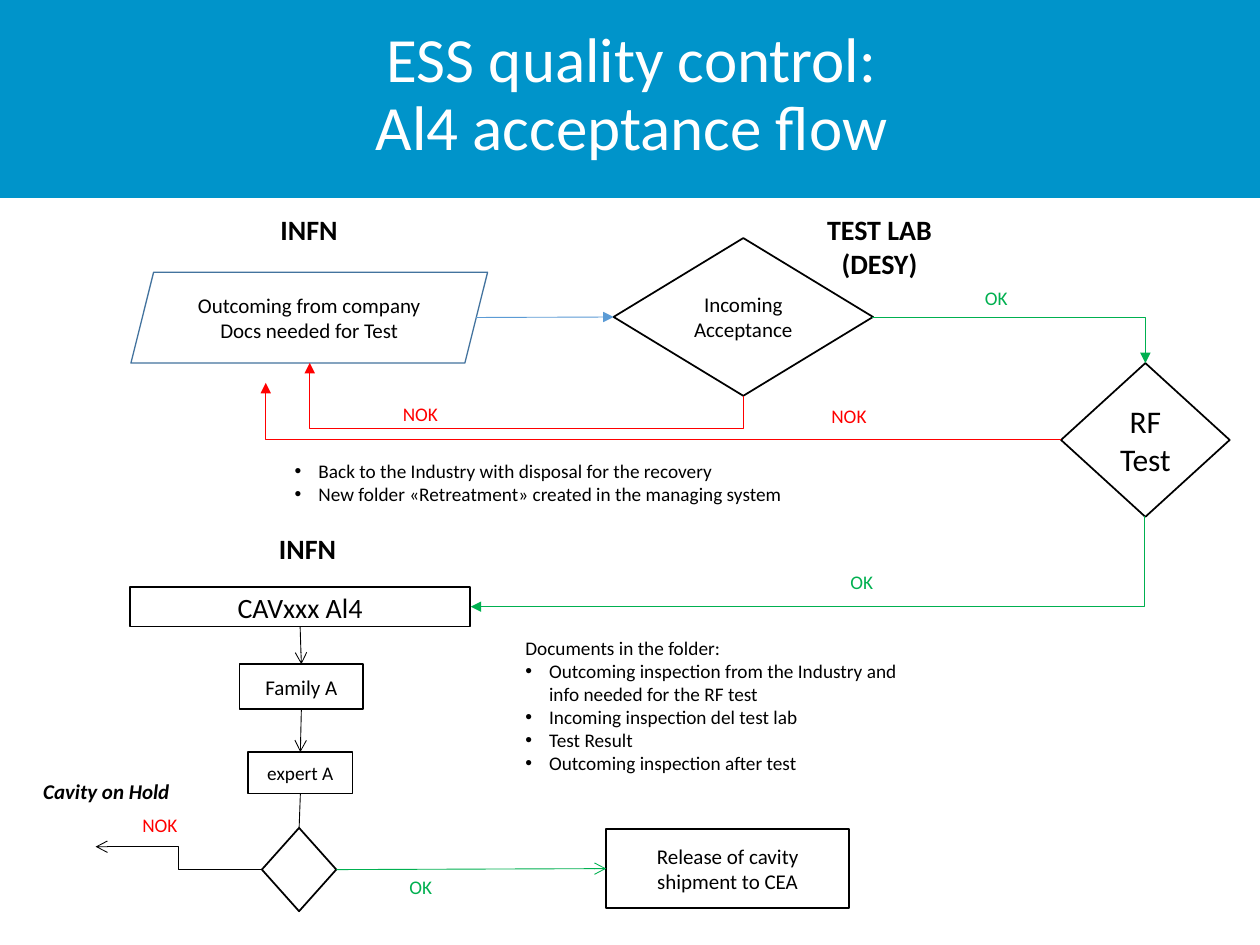
from lxml import etree
from pptx import Presentation
from pptx.dml.color import RGBColor
from pptx.enum.shapes import MSO_CONNECTOR, MSO_SHAPE
from pptx.enum.text import MSO_ANCHOR, PP_ALIGN
from pptx.oxml.ns import qn
from pptx.util import Cm, Pt

WHITE = RGBColor(0xFF, 0xFF, 0xFF)
BLACK = RGBColor(0, 0, 0)
BANNER_BLUE = RGBColor(0x00, 0x94, 0xCA)
LINK_BLUE = RGBColor(0x5B, 0x9B, 0xD5)
EDGE_BLUE = RGBColor(0x43, 0x73, 0x9E)
RED = RGBColor(0xFF, 0, 0)
GREEN = RGBColor(0x00, 0xB0, 0x50)
RECTANGLE, DECISION = MSO_SHAPE.RECTANGLE, MSO_SHAPE.FLOWCHART_DECISION
PARALLELOGRAM = MSO_SHAPE.PARALLELOGRAM
STRAIGHT, ELBOW = MSO_CONNECTOR.STRAIGHT, MSO_CONNECTOR.ELBOW
LEFT, CENTER, MIDDLE = PP_ALIGN.LEFT, PP_ALIGN.CENTER, MSO_ANCHOR.MIDDLE
TOP_SIDE, LEFT_SIDE, BOTTOM_SIDE, RIGHT_SIDE = range(4)


def write(shape, lines, size, color=BLACK, align=CENTER, bold=False, italic=False):
    frame = shape.text_frame
    frame.word_wrap = True
    for index, line in enumerate(lines):
        para = frame.paragraphs[0] if index == 0 else frame.add_paragraph()
        para.text = line.removeprefix("• ")
        para.alignment = align
        if line.startswith("• "):
            properties = para._p.get_or_add_pPr()
            properties.set("marL", str(Cm(0.48)))
            properties.set("indent", str(Cm(-0.48)))
            etree.SubElement(properties, qn("a:buFont")).set("typeface", "Arial")
            etree.SubElement(properties, qn("a:buChar")).set("char", "•")
        para.font.name = "Calibri"
        para.font.size = Pt(size)
        para.font.color.rgb = color
        para.font.bold = bold
        para.font.italic = italic


def connect(kind, begin, end, color, head):
    link = slide.shapes.add_connector(kind, *(Cm(value) for value in begin + end))
    link.line.color.rgb = color
    link.line.width = Pt(0.5)
    if head:
        outline = link.line._get_or_add_ln()
        etree.SubElement(outline, qn("a:tailEnd")).set("type", head)
    etree.SubElement(link._element.spPr, qn("a:effectLst"))
    return link


deck = Presentation()
deck.slide_width, deck.slide_height = Cm(25.4), Cm(19.05)
slide = deck.slides.add_slide(deck.slide_layouts[6])

for top, height, color in ((0, 3.99, BANNER_BLUE), (4.19, 14.86, WHITE)):
    panel = slide.shapes.add_shape(RECTANGLE, 0, Cm(top), deck.slide_width, Cm(height))
    panel.shadow.inherit = False
    panel.fill.solid()
    panel.fill.fore_color.rgb = color
    panel.line.fill.background()

title = slide.shapes.add_textbox(Cm(4.67), Cm(0.15), Cm(16.13), Cm(3.58))
write(title, ["ESS quality control:\vAl4 acceptance flow"], 36, WHITE)
title.text_frame.vertical_anchor = MIDDLE
title.text_frame.paragraphs[0].line_spacing = 0.9

steps = {}
for name, kind, left, top, width, height, lines, size in (
    ("company", PARALLELOGRAM, 2.64, 5.49, 7.19, 1.83,
     ["Outcoming from company", "Docs needed for Test"], 12),
    ("incoming", DECISION, 12.37, 4.8, 5.23, 3.18, ["Incoming Acceptance"], 12),
    ("rf test", DECISION, 21.39, 7.32, 3.4, 3.1, ["RF Test"], 18),
    ("cavity", RECTANGLE, 2.62, 11.84, 6.86, 0.79, ["CAVxxx Al4"], 16),
    ("family", RECTANGLE, 4.83, 13.39, 2.49, 0.91, ["Family A"], 12),
    ("expert", RECTANGLE, 5, 15.16, 2.11, 0.84, ["expert A"], 11),
    ("verdict", DECISION, 5.28, 16.69, 1.5, 1.68, [], 12),
    ("release", RECTANGLE, 12.22, 16.71, 4.9, 1.6,
     ["Release of cavity shipment to CEA"], 12),
):
    step = slide.shapes.add_shape(kind, Cm(left), Cm(top), Cm(width), Cm(height))
    step.shadow.inherit = False
    step.fill.background()
    step.line.color.rgb = BLACK
    step.line.width = Pt(1)
    step.text_frame.vertical_anchor = MIDDLE
    write(step, lines, size)
    steps[name] = step

company = steps["company"]
company.fill.solid()
company.fill.fore_color.rgb = WHITE
company.line.color.rgb = EDGE_BLUE
company.line.width = Pt(0.75)

to_incoming = connect(STRAIGHT, (9.6, 6.4), (12.37, 6.4), LINK_BLUE, "triangle")
to_incoming.end_connect(steps["incoming"], LEFT_SIDE)
for source, begin_side, target, end_side, color, head in (
    ("cavity", BOTTOM_SIDE, "family", TOP_SIDE, BLACK, "arrow"),
    ("family", BOTTOM_SIDE, "expert", TOP_SIDE, BLACK, "arrow"),
    ("expert", BOTTOM_SIDE, "verdict", TOP_SIDE, BLACK, None),
    ("verdict", RIGHT_SIDE, "release", LEFT_SIDE, GREEN, "arrow"),
):
    link = connect(STRAIGHT, (0, 0), (1, 1), color, head)
    link.begin_connect(steps[source], begin_side)
    link.end_connect(steps[target], end_side)

for begin, end, color, head, preset, turn, bend in (
    ((17.58, 6.4), (23.09, 7.32), GREEN, "triangle", "bentConnector2", 0, None),
    ((21.39, 8.86), (5.36, 7.72), RED, "triangle", "bentConnector2", 0, None),
    ((15.37, 4.52), (17.2, 18.11), GREEN, "triangle", "bentConnector2", 90, None),
    ((10.95, 3.28), (10.28, 12.02), RED, "triangle", "bentConnector3", 90, -98600),
    ((5.28, 17.53), (1.93, 17.07), BLACK, "arrow", "bentConnector3", 0, 50000),
):
    properties = connect(ELBOW, begin, end, color, head)._element.spPr
    geometry = properties.find(qn("a:prstGeom"))
    geometry.set("prst", preset)
    if turn:
        properties.find(qn("a:xfrm")).set("rot", str(turn * 60000))
    if bend is not None:
        guide = etree.SubElement(geometry.find(qn("a:avLst")), qn("a:gd"))
        guide.set("name", "adj1")
        guide.set("fmla", f"val {bend}")

for left, top, width, height, label in (
    (3.78, 4.17, 4.9, 0.99, "INFN"),
    (15.85, 4.17, 3.76, 1.63, "TEST LAB (DESY)"),
    (4.32, 10.59, 3.76, 0.99, "INFN"),
):
    box = slide.shapes.add_textbox(Cm(left), Cm(top), Cm(width), Cm(height))
    write(box, [label], 16, bold=True)

for left, top, label, color, align in (
    (7.87, 7.98, "NOK", RED, LEFT),
    (16.33, 8.03, "NOK", RED, CENTER),
    (2.44, 16.28, "NOK", RED, CENTER),
    (19.3, 5.64, "OK", GREEN, CENTER),
    (16.59, 11.38, "OK", GREEN, CENTER),
    (7.7, 17.53, "OK", GREEN, CENTER),
):
    box = slide.shapes.add_textbox(Cm(left), Cm(top), Cm(1.57), Cm(0.76))
    write(box, [label], 11, color, align)

hold = slide.shapes.add_textbox(Cm(0.28), Cm(15.57), Cm(3.73), Cm(0.81))
write(hold, ["Cavity on Hold"], 12, bold=True, italic=True)

recovery = slide.shapes.add_textbox(Cm(5.69), Cm(9.14), Cm(11), Cm(1.27))
write(recovery, [
    "• Back to the Industry with disposal for the recovery",
    "• New folder «Retreatment» created in the managing system",
], 11, align=LEFT)
recovery.text_frame.word_wrap = False

documents = slide.shapes.add_textbox(Cm(10.34), Cm(12.7), Cm(8.64), Cm(3.25))
write(documents, [
    "Documents in the folder:",
    "• Outcoming inspection from the Industry and info needed for the RF test",
    "• Incoming inspection del test lab",
    "• Test Result",
    "• Outcoming inspection after test",
], 11, align=LEFT)

deck.save("out.pptx")
